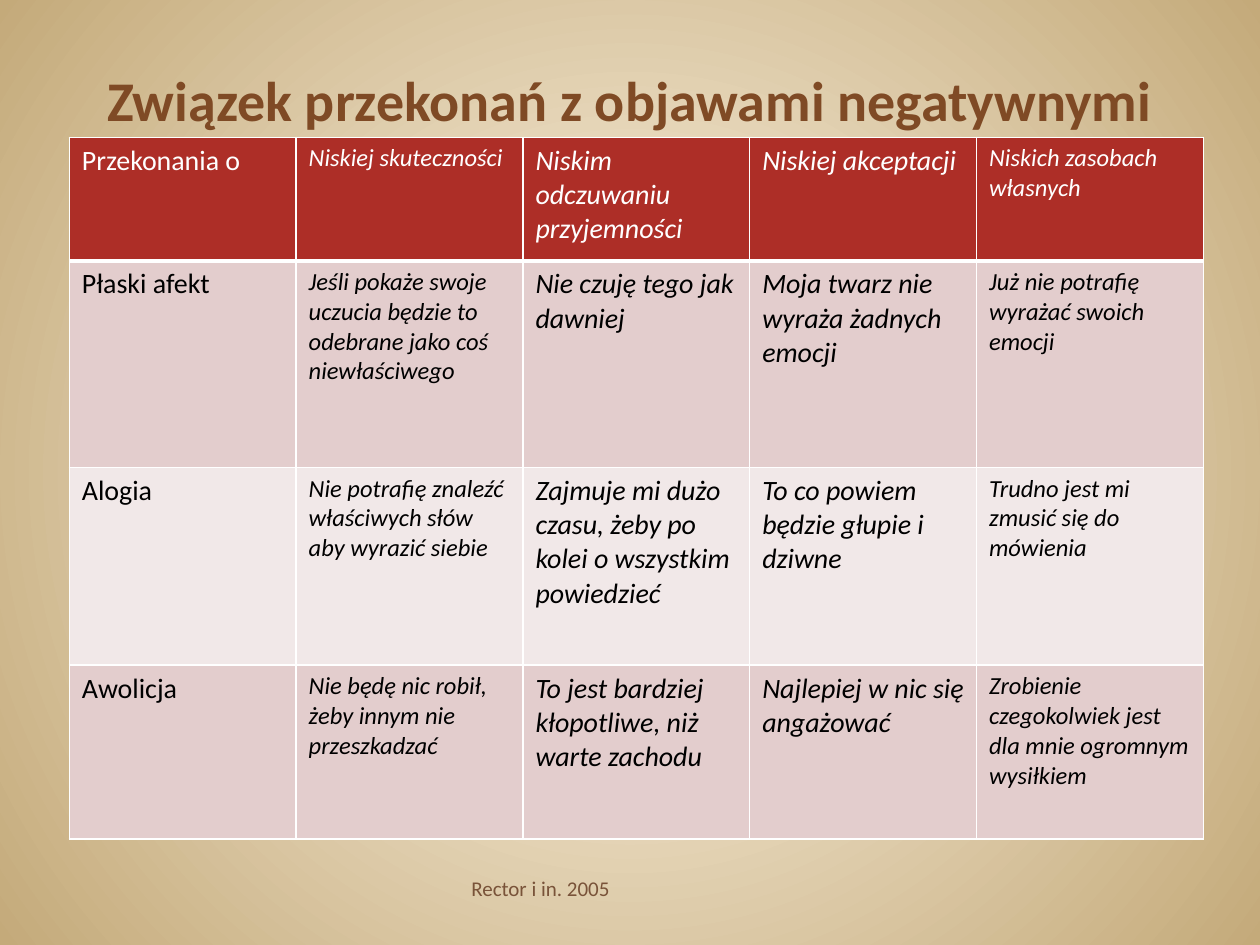
from typing import NamedTuple

from lxml import etree
from pptx import Presentation
from pptx import util as u
from pptx.dml.color import RGBColor
from pptx.enum import text
from pptx.oxml import ns

Pt = u.Pt

WHITE = RGBColor(0xFF, 0xFF, 0xFF)
BLACK = RGBColor(0x00, 0x00, 0x00)
CREAM = RGBColor(0xFF, 0xF7, 0xE8)
SAND = RGBColor(0xC4, 0xAA, 0x7A)
TITLE_BROWN = RGBColor(0x7F, 0x4A, 0x25)
SOURCE_BROWN = RGBColor(0x79, 0x53, 0x39)
RED = RGBColor(0xAD, 0x2E, 0x27)
PINK = RGBColor(0xE3, 0xCD, 0xCD)
PALE_PINK = RGBColor(0xF1, 0xE8, 0xE8)
FONT = "Calibri"


class Style(NamedTuple):
    size: float
    color: RGBColor
    bold: bool = False
    italic: bool = False


class Caption(NamedTuple):
    left: float
    top: float
    width: float
    height: float
    words: str
    style: Style


class Row(NamedTuple):
    height: float
    fill: RGBColor
    color: RGBColor
    bottom_line: float
    cells: tuple[str, ...]


CAPTIONS = (
    Caption(39.6, -16.56, 648, 95.76, "Związek przekonań z objawami negatywnymi ",
            Style(32, TITLE_BROWN, bold=True)),
    Caption(167.76, 488.16, 282.24, 30.24, "Rector i in. 2005",
            Style(12, SOURCE_BROWN)),
)

COLUMN_WIDTH = 129.6
COLUMN_SIZES = (16, 14, 16, 16, 14)
ROWS = (
    Row(70.56, RED, WHITE, 3, (
        "Przekonania o",
        "Niskiej skuteczności",
        "Niskim odczuwaniu przyjemności",
        "Niskiej akceptacji",
        "Niskich zasobach własnych")),
    Row(118.08, PINK, BLACK, 1, (
        "Płaski afekt",
        "Jeśli pokaże swoje uczucia będzie to odebrane jako coś niewłaściwego",
        "Nie czuję tego jak dawniej",
        "Moja twarz nie wyraża żadnych emocji",
        "Już nie potrafię wyrażać swoich emocji")),
    Row(113.04, PALE_PINK, BLACK, 1, (
        "Alogia",
        "Nie potrafię znaleźć właściwych słów aby wyrazić siebie",
        "Zajmuje mi dużo czasu, żeby po kolei o wszystkim powiedzieć",
        "To co powiem będzie głupie i dziwne",
        "Trudno jest mi zmusić się do mówienia")),
    Row(99.36, PINK, BLACK, 1, (
        "Awolicja",
        "Nie będę nic robił, żeby innym nie przeszkadzać",
        "To jest bardziej kłopotliwe, niż warte zachodu",
        "Najlepiej w nic się angażować",
        "Zrobienie czegokolwiek jest dla mnie ogromnym wysiłkiem")),
)


def paint_background(s) -> None:
    """Fill the slide with a circular gradient centred on the slide."""
    fill = s.background.fill
    fill.gradient()
    for stop, color in zip(fill.gradient_stops, (CREAM, SAND)):
        stop.color.rgb = color
    gradient = next(s.element.iter(ns.qn("a:gradFill")))
    gradient.remove(gradient.find(ns.qn("a:lin")))
    circle = etree.SubElement(gradient, ns.qn("a:path"), path="circle")
    etree.SubElement(circle, ns.qn("a:fillToRect"),
                     l="50000", t="50000", r="50000", b="50000")


def add_run(p, words: str, style: Style) -> None:
    r = p.add_run()
    r.text = words
    r.font.name = FONT
    r.font.size = Pt(style.size)
    r.font.bold = style.bold
    r.font.italic = style.italic
    r.font.color.rgb = style.color


def add_caption(s, caption: Caption) -> None:
    sp = s.shapes.add_textbox(Pt(caption.left), Pt(caption.top),
                              Pt(caption.width), Pt(caption.height))
    tf = sp.text_frame
    tf.word_wrap = True
    tf.vertical_anchor = text.MSO_ANCHOR.BOTTOM
    p = tf.paragraphs[0]
    p.alignment = text.PP_ALIGN.CENTER
    add_run(p, caption.words, caption.style)


def set_borders(cell, bottom: float) -> None:
    """Draw white 1 pt cell borders, with a bottom line of the given width."""
    properties = cell._tc.get_or_add_tcPr()
    for i, (side, width) in enumerate(zip("LRTB", (1, 1, 1, bottom))):
        line = etree.Element(ns.qn(f"a:ln{side}"), w=str(Pt(width)))
        fill = etree.SubElement(line, ns.qn("a:solidFill"))
        etree.SubElement(fill, ns.qn("a:srgbClr"), val=str(WHITE))
        properties.insert(i, line)


def add_belief_table(s, left: float, top: float) -> None:
    columns = len(COLUMN_SIZES)
    table = s.shapes.add_table(
        len(ROWS), columns, Pt(left), Pt(top), Pt(columns * COLUMN_WIDTH),
        Pt(sum(row.height for row in ROWS))).table
    for column in table.columns:
        column.width = Pt(COLUMN_WIDTH)
    for y, row in enumerate(ROWS):
        table.rows[y].height = Pt(row.height)
        for x, (words, size) in enumerate(zip(row.cells, COLUMN_SIZES)):
            cell = table.cell(y, x)
            cell.fill.solid()
            cell.fill.fore_color.rgb = row.fill
            set_borders(cell, row.bottom_line)
            add_run(cell.text_frame.paragraphs[0], words,
                    Style(size, row.color, italic=x > 0))


def main() -> None:
    prs = Presentation()
    prs.slide_width, prs.slide_height = Pt(720), Pt(540)
    s = prs.slides.add_slide(prs.slide_layouts[6])
    paint_background(s)
    title, source = CAPTIONS
    add_caption(s, title)
    add_belief_table(s, 39.6, 78.48)
    add_caption(s, source)
    prs.save("out.pptx")


if __name__ == "__main__":
    main()
